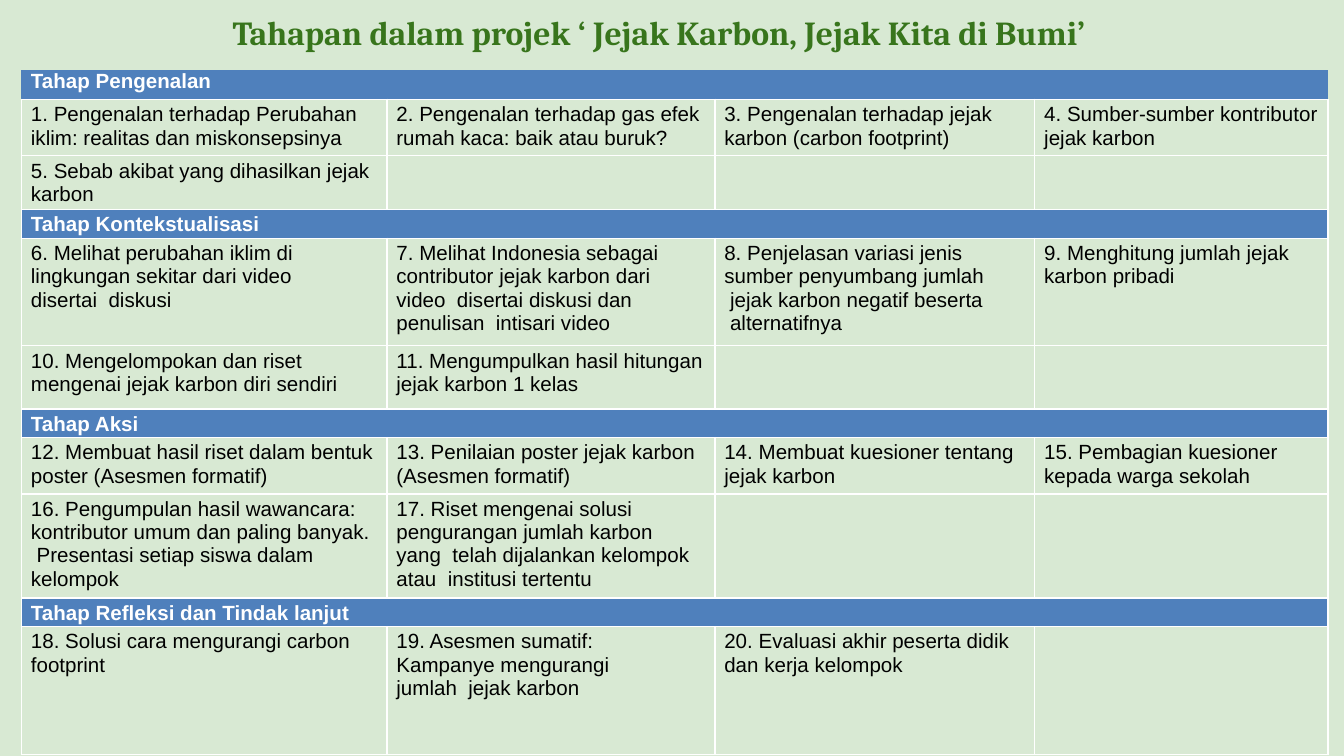
from typing import NamedTuple

from pptx import Presentation
from pptx import util as u
from pptx.dml import color
from pptx.enum import shapes, text
from pptx.oxml import parse_xml
from pptx.oxml import ns

GREEN, BLUE, WHITE, BLACK, DARK = "D8E9D3", "4F80BC", "FFFFFF", "000000", "38751C"
COLS = [2.72, 2.44, 2.38, 2.18]
ROWS = [0.22, 0.42, 0.38, 0.21, 0.8, 0.47, 0.21, 0.42, 0.75, 0.21, 0.95]


class Step(NamedTuple):
    """Numbered step: first line, rest, and right indent when the rest wraps."""
    head: str
    tail: str
    gap: float = 0


class Stage(NamedTuple):
    name: str
    rows: list[list[Step]]


STAGES = [
    Stage("Tahap Pengenalan", [
        [Step("1. Pengenalan terhadap Perubahan", "iklim: realitas dan miskonsepsinya"),
         Step("2. Pengenalan terhadap gas efek", "rumah kaca: baik atau buruk?"),
         Step("3. Pengenalan terhadap jejak", "karbon (carbon footprint)"),
         Step("4. Sumber-sumber kontributor", "jejak karbon")],
        [Step("5. Sebab akibat yang dihasilkan jejak", "karbon")],
    ]),
    Stage("Tahap Kontekstualisasi", [
        [Step("6. Melihat perubahan iklim di",
              "lingkungan sekitar dari video disertai  diskusi", 0.3),
         Step("7. Melihat Indonesia sebagai",
              "contributor jejak karbon dari video  disertai diskusi dan "
              "penulisan  intisari video", 0.3),
         Step("8. Penjelasan variasi jenis",
              "sumber penyumbang jumlah  jejak karbon negatif beserta  alternatifnya", 0.36),
         Step("9. Menghitung jumlah jejak", "karbon pribadi")],
        [Step("10. Mengelompokan dan riset", "mengenai jejak karbon diri sendiri"),
         Step("11. Mengumpulkan hasil hitungan", "jejak karbon 1 kelas")],
    ]),
    Stage("Tahap Aksi", [
        [Step("12. Membuat hasil riset dalam bentuk", "poster (Asesmen formatif)"),
         Step("13. Penilaian poster jejak karbon", "(Asesmen formatif)"),
         Step("14. Membuat kuesioner tentang", "jejak karbon"),
         Step("15. Pembagian kuesioner", "kepada warga sekolah")],
        [Step("16. Pengumpulan hasil wawancara:",
              "kontributor umum dan paling banyak.  Presentasi setiap siswa "
              "dalam  kelompok", 0.1),
         Step("17. Riset mengenai solusi",
              "pengurangan jumlah karbon yang  telah dijalankan kelompok "
              "atau  institusi tertentu", 0.13)],
    ]),
    Stage("Tahap Refleksi dan Tindak lanjut", [
        [Step("18. Solusi cara mengurangi carbon", "footprint"),
         Step("19. Asesmen sumatif:", "Kampanye mengurangi jumlah  jejak karbon", 0.4),
         Step("20. Evaluasi akhir peserta didik", "dan kerja kelompok")],
    ]),
]

BODY = {"name": "Arial", "size": u.Pt(11), "bold": False}
HEAD = BODY | {"bold": True}
TITLE = {"name": "Cambria", "size": u.Pt(18), "bold": True}
FLUSH = {f"margin_{side}": 0 for side in ("left", "top", "right", "bottom")}


def rgb(code: str) -> color.RGBColor:
    return color.RGBColor.from_string(code)


def style(item, form: dict) -> None:
    for key, value in form.items():
        setattr(item, key, value)


def paint(item, code: str) -> None:
    item.fill.solid()
    item.fill.fore_color.rgb = rgb(code)


def write(para, words: str, form: dict, code: str, left: float = 0.07,
          right: float = 0, **space) -> None:
    run = para.add_run()
    run.text = words
    style(run.font, form)
    run.font.color.rgb = rgb(code)
    style(para, space)
    prop = para._p.get_or_add_pPr()
    for key, value in {"marL": left, "marR": right, "indent": 0}.items():
        prop.set(key, str(int(u.Inches(value))))


def edge(cell, **widths: float) -> None:
    """Draw white cell borders, in points by side (L, R, T, B); 0 is no line."""
    prop = cell._tc.get_or_add_tcPr()
    for side, width in widths.items():
        ink = (f'<a:solidFill><a:srgbClr val="{WHITE}"/></a:solidFill>'
               if width else "<a:noFill/>")
        prop.append(parse_xml(
            f'<a:ln{side} {ns.nsdecls("a")} w="{int(u.Pt(width))}">{ink}</a:ln{side}>'))


def fill_step(cell, step: Step) -> None:
    frame = cell.text_frame
    write(frame.paragraphs[0], step.head, BODY, BLACK, line_spacing=1.16)
    space = {"line_spacing": 1.02} if step.gap else {"space_before": u.Pt(0.3)}
    write(frame.add_paragraph(), step.tail, BODY, BLACK, right=step.gap, **space)


def draw_table(slide) -> None:
    grid = slide.shapes.add_table(
        len(ROWS), len(COLS), u.Inches(0.16), u.Inches(0.52),
        u.Inches(sum(COLS)), u.Inches(sum(ROWS))).table
    style(grid, {"first_row": False, "horz_banding": False})
    for col, width in zip(grid.columns, COLS):
        col.width = u.Inches(width)
    for row, height in zip(grid.rows, ROWS):
        row.height = u.Inches(height)

    # Stage bars, each followed by its rows of steps
    lines = [line for stage in STAGES for line in (stage.name, *stage.rows)]
    bars = {i for i, line in enumerate(lines) if isinstance(line, str)}
    last = len(COLS) - 1
    for i, line in enumerate(lines):
        bar = i in bars
        top = 1 if bar or i - 1 in bars else 0.75
        base = 1 if bar or i + 1 in bars or i + 1 == len(lines) else 0.75
        for j in range(len(COLS)):
            cell = grid.cell(i, j)
            style(cell, FLUSH)
            if i == 0:
                edge(cell, L=0, R=0, T=0, B=base)
            else:
                edge(cell, L=1 if bar or j == 0 else 0.75,
                     R=1 if bar or j == last else 0.75, T=top, B=base)
            paint(cell, BLUE if bar else GREEN)
            if not bar and j < len(line):
                fill_step(cell, line[j])
        if bar:
            grid.cell(i, 0).merge(grid.cell(i, last))
            space = {"line_spacing": 1.16} if i else {}
            write(grid.cell(i, 0).text_frame.paragraphs[0], line, HEAD, WHITE, **space)


def main() -> None:
    # Widescreen page, 16 to 9
    deck = Presentation()
    wide = u.Inches(10)
    style(deck, {"slide_width": wide, "slide_height": wide * 9 // 16})
    slide = deck.slides.add_slide(deck.slide_layouts[6])

    # Backdrop
    back = slide.shapes.add_shape(
        shapes.MSO_SHAPE.RECTANGLE, 0, 0, deck.slide_width, deck.slide_height)
    paint(back, GREEN)
    back.line.fill.background()
    back.shadow.inherit = False

    # Title
    box = slide.shapes.add_textbox(
        u.Inches(1.72), u.Inches(0.08), u.Inches(6.48), u.Inches(0.33))
    style(box.text_frame, FLUSH | {
        "margin_top": u.Inches(0.01), "word_wrap": True,
        "auto_size": text.MSO_AUTO_SIZE.SHAPE_TO_FIT_TEXT})
    write(box.text_frame.paragraphs[0],
          "Tahapan dalam projek ‘ Jejak Karbon, Jejak Kita di Bumi’",
          TITLE, DARK, left=0.01)

    # Stages and steps
    draw_table(slide)
    deck.save("out.pptx")


if __name__ == "__main__":
    main()
